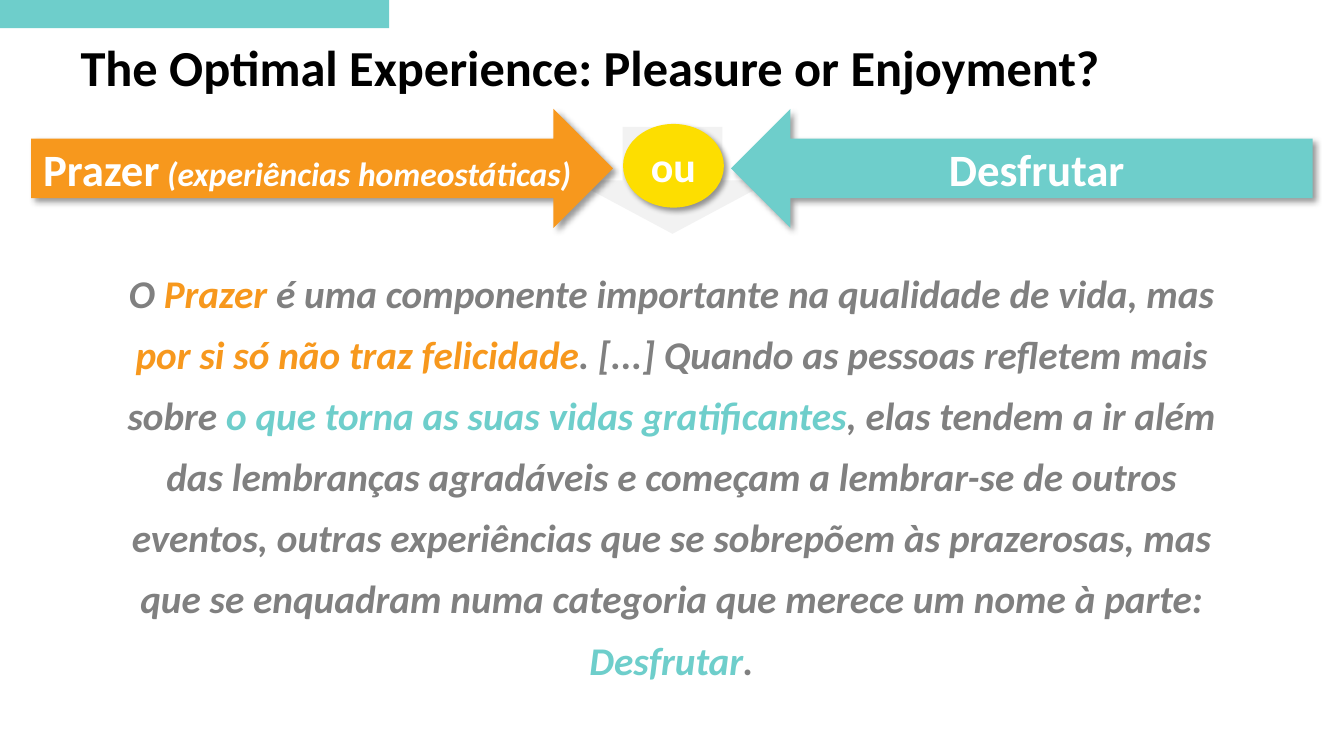
from dataclasses import dataclass
from lxml import etree
from pptx import Presentation
from pptx.dml.color import RGBColor
from pptx.enum.shapes import MSO_SHAPE as SHAPE
from pptx.enum.text import MSO_ANCHOR as ANCHOR, PP_ALIGN as ALIGN
from pptx.oxml import parse_xml
from pptx.oxml.ns import nsdecls, qn
from pptx.util import Inches, Pt


@dataclass(frozen=True)
class Theme:
    font: str = "Calibri"
    teal: str = "6ECECB"
    orange: str = "F7981D"
    yellow: str = "FDDE00"
    pale: str = "F2F2F2"
    gray: str = "808080"
    black: str = "000000"
    white: str = "FFFFFF"
    title: int = 36
    label: int = 32
    joiner: int = 30
    body: int = 28
    note: int = 24


class SlideBuilder:
    def __init__(self, prs, theme):
        self.theme = theme
        self.s = prs.slides.add_slide(prs.slide_layouts[6])

    def fill_text(self, tf, runs, size, align=ALIGN.CENTER):
        tf.word_wrap = True
        p = tf.paragraphs[0]
        p.alignment = align
        p.font.name = self.theme.font
        p.font.size = Pt(size)
        p.font.bold = True
        for text, color in runs:
            r = p.add_run()
            r.text = text
            r.font.color.rgb = RGBColor.from_string(color)
        return p

    def text(self, box, runs, size, align, spacing):
        tf = self.s.shapes.add_textbox(*map(Inches, box)).text_frame
        p = self.fill_text(tf, runs, size, align)
        p.line_spacing = spacing
        return p

    def shape(self, kind, box, fill):
        sp = self.s.shapes.add_shape(kind, *map(Inches, box))
        sp.shadow.inherit = False
        sp.fill.solid()
        sp.fill.fore_color.rgb = RGBColor.from_string(fill)
        sp.line.fill.background()
        return sp

    def label(self, kind, box, fill, words, size):
        sp = self.shape(kind, box, fill)
        self.add_shadow(sp)
        tf = sp.text_frame
        tf.vertical_anchor = ANCHOR.MIDDLE
        return self.fill_text(tf, [(word, self.theme.white) for word in words], size)

    def add_shadow(self, sp):
        effects = sp._element.spPr.find(qn("a:effectLst"))
        shadow = parse_xml(
            f'<a:outerShdw {nsdecls("a")} blurRad="{Pt(4)}" dist="{Pt(3)}" '
            f'dir="{45 * 60000}" algn="tl" rotWithShape="0"/>')
        color = etree.SubElement(shadow, qn("a:srgbClr"), val=self.theme.black)
        etree.SubElement(color, qn("a:alpha"), val="40000")
        effects.append(shadow)


def main():
    prs = Presentation()
    prs.slide_width, prs.slide_height = Inches(13.33), Inches(7.5)
    t = Theme()
    slide = SlideBuilder(prs, t)

    slide.shape(SHAPE.RECTANGLE, (0, 0, 3.86, 0.28), t.teal)
    slide.text((0.7, 0.38, 12.22, 0.76),
               [("The Optimal Experience: Pleasure or Enjoyment?", t.black)],
               t.title, ALIGN.LEFT, 0.9)

    quote = [
        ("O ", t.gray),
        ("Prazer ", t.orange),
        ("é uma componente importante na qualidade de vida, mas ", t.gray),
        ("por si só não traz felicidade", t.orange),
        (". [...] Quando as pessoas refletem mais sobre ", t.gray),
        ("o que torna as suas vidas gratificantes", t.teal),
        (", elas tendem a ir além das lembranças agradáveis e começam a "
         "lembrar-se de outros eventos, outras experiências que se sobrepõem "
         "às prazerosas, mas que se enquadram numa categoria que merece um "
         "nome à parte: ", t.gray),
        ("Desfrutar", t.teal),
        (".", t.gray),
    ]
    p = slide.text((0.92, 2.48, 11.48, 4.1), quote, t.body, ALIGN.CENTER, 1.3)
    p.font.italic = True
    p.space_after = Pt(6)

    slide.shape(SHAPE.DOWN_ARROW, (5.68, 1.26, 1.98, 1.06), t.pale)
    p = slide.label(SHAPE.RIGHT_ARROW, (0.31, 1.08, 5.77, 1.18), t.orange,
                    ["Prazer", " ", "(experiências homeostáticas)"], t.label)
    for r in p.runs[1:]:
        r.font.size = Pt(t.note)
    p.runs[-1].font.italic = True
    slide.label(SHAPE.LEFT_ARROW, (7.25, 1.08, 5.77, 1.18), t.teal,
                ["Desfrutar"], t.label)
    slide.label(SHAPE.OVAL, (6.18, 1.23, 1, 0.83), t.yellow, ["ou"], t.joiner)

    prs.save("out.pptx")


if __name__ == "__main__":
    main()
